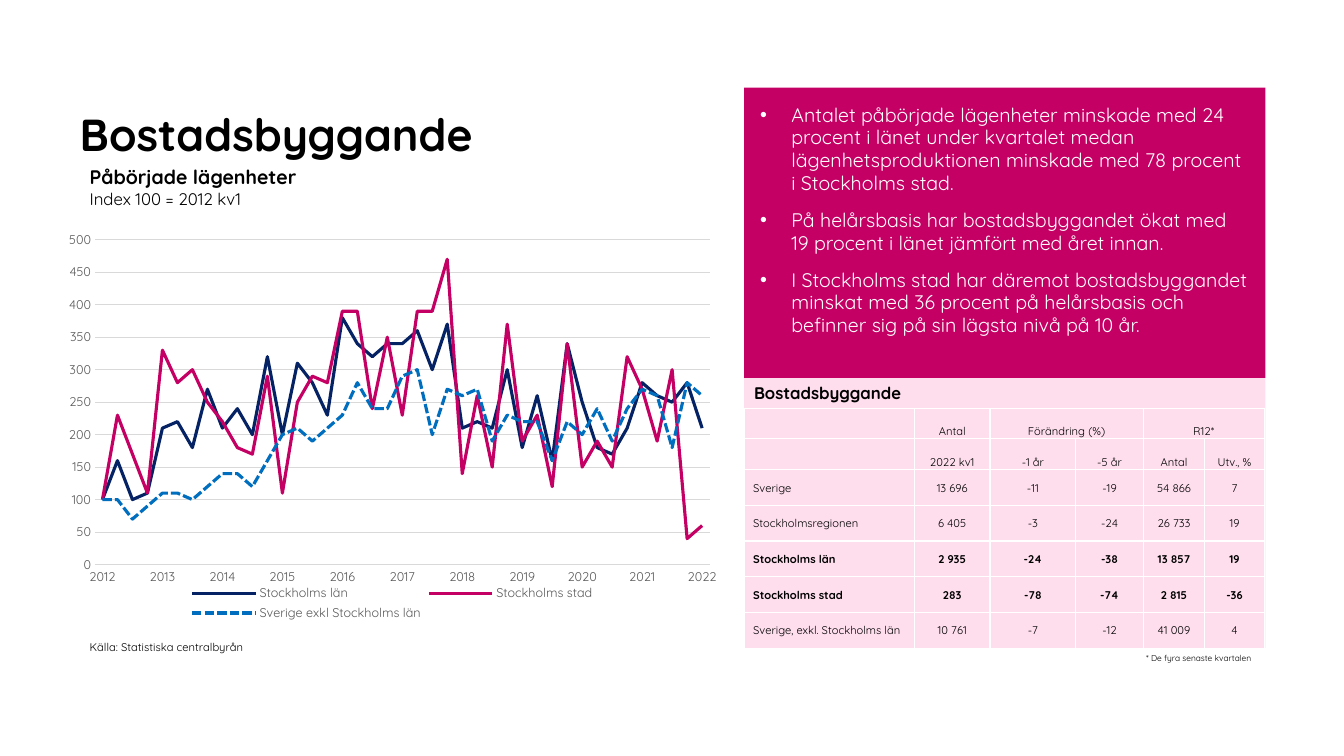
import pptx
import pptx.chart.data
import pptx.dml.color
import pptx.enum.chart
import pptx.enum.dml
import pptx.enum.shapes
import pptx.enum.text
import pptx.oxml
import pptx.oxml.ns
import pptx.util
from lxml import etree

Inches, Pt = pptx.util.Inches, pptx.util.Pt
RGBColor = pptx.dml.color.RGBColor
ANCHOR = pptx.enum.text.MSO_ANCHOR
CHART = pptx.enum.chart
qn = pptx.oxml.ns.qn

BLACK = RGBColor(0x00, 0x00, 0x00)
WHITE = RGBColor(0xFF, 0xFF, 0xFF)
MAGENTA = RGBColor(0xC4, 0x00, 0x64)
PINK = RGBColor(0xFE, 0xDE, 0xED)
NAVY = RGBColor(0x05, 0x23, 0x64)
BLUE = RGBColor(0x00, 0x6E, 0xBF)
GRAY = RGBColor(0x59, 0x59, 0x59)
GRID = RGBColor(0xD9, 0xD9, 0xD9)

PANEL_LEFT, PANEL_WIDTH = 7.38, 5.17
BULLETS = [
    "Antalet påbörjade lägenheter minskade med 24 procent i länet under kvartalet medan "
    "lägenhetsproduktionen minskade med 78 procent i Stockholms stad.",
    "På helårsbasis har bostadsbyggandet ökat med 19 procent i länet jämfört med året innan.",
    "I Stockholms stad har däremot bostadsbyggandet minskat med 36 procent på helårsbasis och "
    "befinner sig på sin lägsta nivå på 10 år.",
]
HOUSING_ROWS = [
    ["", "Antal", "Förändring (%)", "", "R12*", ""],
    ["", "2022 kv1", "-1 år", "-5 år", "Antal", "Utv., %"],
    ["Sverige", "13 696", "-11", "-19", "54 866", "7"],
    ["Stockholmsregionen", "6 405", "-3", "-24", "26 733", "19"],
    ["Stockholms län", "2 935", "-24", "-38", "13 857", "19"],
    ["Stockholms stad", "283", "-78", "-74", "2 815", "-36"],
    ["Sverige, exkl. Stockholms län", "10 761", "-7", "-12", "41 009", "4"],
]
BOLD_ROWS = (4, 5)
COLUMN_WIDTHS = [1.69, 0.75, 0.85, 0.67, 0.61, 0.59]
ROW_HEIGHTS = [0.3, 0.31] + [(2.38 - 0.61) / 5] * 5

# One label at the first quarter of each year
QUARTERS = [str(2012 + i // 4) if i % 4 == 0 else "" for i in range(41)]
SERIES = [
    ("Stockholms län", NAVY, False,
     [100, 160, 100, 110, 210, 220, 180, 270, 210, 240, 200, 320, 200, 310,
      280, 230, 380, 340, 320, 340, 340, 360, 300, 370, 210, 220, 210, 300,
      180, 260, 160, 340, 250, 180, 170, 210, 280, 260, 250, 280, 210]),
    ("Stockholms stad", MAGENTA, False,
     [100, 230, 170, 110, 330, 280, 300, 250, 220, 180, 170, 290, 110, 250,
      290, 280, 390, 390, 240, 350, 230, 390, 390, 470, 140, 260, 150, 370,
      190, 230, 120, 340, 150, 190, 150, 320, 270, 190, 300, 40, 60]),
    ("Sverige exkl Stockholms län", BLUE, True,
     [100, 100, 70, 90, 110, 110, 100, 120, 140, 140, 120, 160, 200, 210,
      190, 210, 230, 280, 240, 240, 290, 300, 200, 270, 260, 270, 190, 230,
      220, 220, 160, 220, 200, 240, 190, 240, 270, 260, 180, 280, 260]),
]


class SlideBuilder:
    font_name = "Quicksand"

    def __init__(self, presentation):
        self.slide = presentation.slides.add_slide(presentation.slide_layouts[6])

    def style(self, font, size, color=BLACK, bold=False):
        font.name, font.size, font.bold = self.font_name, Pt(size), bold
        font.color.rgb = color

    def text(self, box, lines, wrap=False, anchor=ANCHOR.TOP, inset=None):
        """Write (text, size, bold) lines, parted by line breaks."""
        frame = self.slide.shapes.add_textbox(*map(Inches, box)).text_frame
        frame.word_wrap, frame.vertical_anchor = wrap, anchor
        if inset is not None:
            self.set_insets(frame, inset)
        paragraph = frame.paragraphs[0]
        for index, (content, size, bold) in enumerate(lines):
            if index:
                paragraph.add_line_break()
            run = paragraph.add_run()
            run.text = content
            self.style(run.font, size, bold=bold)

    def set_insets(self, frame, inset):
        frame.margin_left = frame.margin_right = Inches(inset)
        frame.margin_top = frame.margin_bottom = Inches(inset)

    def panel(self, box, color):
        shape = self.slide.shapes.add_shape(
            pptx.enum.shapes.MSO_SHAPE.RECTANGLE, *map(Inches, box))
        shape.shadow.inherit = False
        shape.fill.solid()
        shape.fill.fore_color.rgb = color
        shape.line.fill.background()
        return shape

    def bullets(self, shape, items):
        frame = shape.text_frame
        frame.word_wrap, frame.vertical_anchor = True, ANCHOR.TOP
        self.set_insets(frame, 0.16)
        for index, item in enumerate(items):
            paragraph = frame.add_paragraph() if index else frame.paragraphs[0]
            paragraph.text = item
            paragraph.alignment = pptx.enum.text.PP_ALIGN.LEFT
            paragraph.line_spacing = 0.97
            paragraph.space_before = Pt(10 if index else 0)
            properties = paragraph._p.get_or_add_pPr()
            properties.set("marL", str(Inches(0.31)))
            properties.set("indent", str(-Inches(0.31)))
            etree.SubElement(properties, qn("a:buFont")).set("typeface", "Arial")
            etree.SubElement(properties, qn("a:buChar")).set("char", "•")
            self.style(paragraph.font, 14, WHITE)

    def table(self, box, rows):
        table = self.slide.shapes.add_table(
            len(rows), len(rows[0]), *map(Inches, box)).table
        table.first_row = table.horz_banding = False
        for column, width in zip(table.columns, COLUMN_WIDTHS):
            column.width = Inches(width)
        for row, height in zip(table.rows, ROW_HEIGHTS):
            row.height = Inches(height)
        for r, values in enumerate(rows):
            for c, value in enumerate(values):
                cell = table.cell(r, c)
                cell.fill.background()
                cell.vertical_anchor = ANCHOR.BOTTOM if r < 2 else ANCHOR.MIDDLE
                cell.margin_left = Inches(0.01 if c else 0.09)
                cell.margin_right = cell.margin_top = Inches(0.01)
                cell.margin_bottom = 0
                paragraph = cell.text_frame.paragraphs[0]
                paragraph.text = value
                if c:
                    paragraph.alignment = pptx.enum.text.PP_ALIGN.CENTER
                self.style(paragraph.font, 8, bold=r in BOLD_ROWS)
        for c in (2, 4):
            table.cell(0, c).merge(table.cell(0, c + 1))

    def line_chart(self, box, categories, series_list):
        data = pptx.chart.data.CategoryChartData()
        data.categories = categories
        for name, _, _, values in series_list:
            data.add_series(name, values)
        chart = self.slide.shapes.add_chart(
            CHART.XL_CHART_TYPE.LINE, *map(Inches, box), data).chart
        chart.has_title = False
        self.style(chart.font, 10)
        chart.has_legend = True
        chart.legend.position = CHART.XL_LEGEND_POSITION.BOTTOM
        chart.legend.include_in_layout = False
        self.style(chart.legend.font, 9, GRAY)

        plot = chart.plots[0]
        plot.vary_by_categories = False
        for series, (_, color, dashed, _) in zip(plot.series, series_list):
            series.smooth = False
            series.marker.style = CHART.XL_MARKER_STYLE.NONE
            series.format.line.width = Pt(2.25)
            series.format.line.color.rgb = color
            if dashed:
                series.format.line.dash_style = pptx.enum.dml.MSO_LINE.SQUARE_DOT

        for axis in (chart.category_axis, chart.value_axis):
            axis.major_tick_mark = axis.minor_tick_mark = CHART.XL_TICK_MARK.NONE
            self.style(axis.tick_labels.font, 9, GRAY)
            body = axis._element.find(qn("c:txPr")).find(qn("a:bodyPr"))
            body.set("rot", "-60000000")
            body.set("vert", "horz")
        value_axis = chart.value_axis
        value_axis.minimum_scale, value_axis.maximum_scale = 0, 500
        value_axis.major_unit = 50
        value_axis.format.line.fill.background()
        for line in (chart.category_axis.format.line, value_axis.major_gridlines.format.line):
            line.color.rgb, line.width = GRID, Pt(0.75)

        # Inner plot area as shares of the chart
        plot_area = chart._chartSpace.chart.plotArea
        for layout in plot_area.findall(qn("c:layout")):
            plot_area.remove(layout)
        layout = pptx.oxml.parse_xml(f"<c:layout {pptx.oxml.ns.nsdecls('c')}/>")
        manual = etree.SubElement(layout, qn("c:manualLayout"))
        for tag, value in (("layoutTarget", "inner"), ("xMode", "edge"), ("yMode", "edge"),
                           ("x", 0.06), ("y", 0.04), ("w", 0.91), ("h", 0.81)):
            etree.SubElement(manual, qn(f"c:{tag}")).set("val", str(value))
        plot_area.insert(0, layout)


def main():
    presentation = pptx.Presentation()
    presentation.slide_width, presentation.slide_height = Inches(13.33), Inches(7.5)
    builder = SlideBuilder(presentation)

    # Title and source
    builder.text((0.79, 0.37, 9.22, 1.22), [("Bostadsbyggande", 32, True)],
                 wrap=True, anchor=ANCHOR.BOTTOM, inset=0)
    builder.text((0.79, 6.3, 1.81, 0.24), [("Källa: Statistiska centralbyrån", 8, False)])

    # Panels on the right
    builder.panel((PANEL_LEFT, 3.75, PANEL_WIDTH, 2.68), PINK)
    builder.bullets(builder.panel((PANEL_LEFT, 0.87, PANEL_WIDTH, 2.88), MAGENTA), BULLETS)

    # Table with heading and footnote
    builder.text((PANEL_LEFT, 3.75, 1.69, 0.3), [("Bostadsbyggande", 12, True)])
    builder.text((11.27, 6.43, 1.29, 0.2), [("* De fyra senaste kvartalen", 6, False)])
    builder.table((PANEL_LEFT, 4.05, PANEL_WIDTH, 2.38), HOUSING_ROWS)

    # Chart with heading
    builder.text((0.79, 1.59, 4.58, 0.54),
                 [("Påbörjade lägenheter", 14, True), ("Index 100 = 2012 kv1", 12, False)],
                 wrap=True)
    builder.line_chart((0.54, 2.22, 6.7, 3.98), QUARTERS, SERIES)

    presentation.save("out.pptx")


if __name__ == "__main__":
    main()
